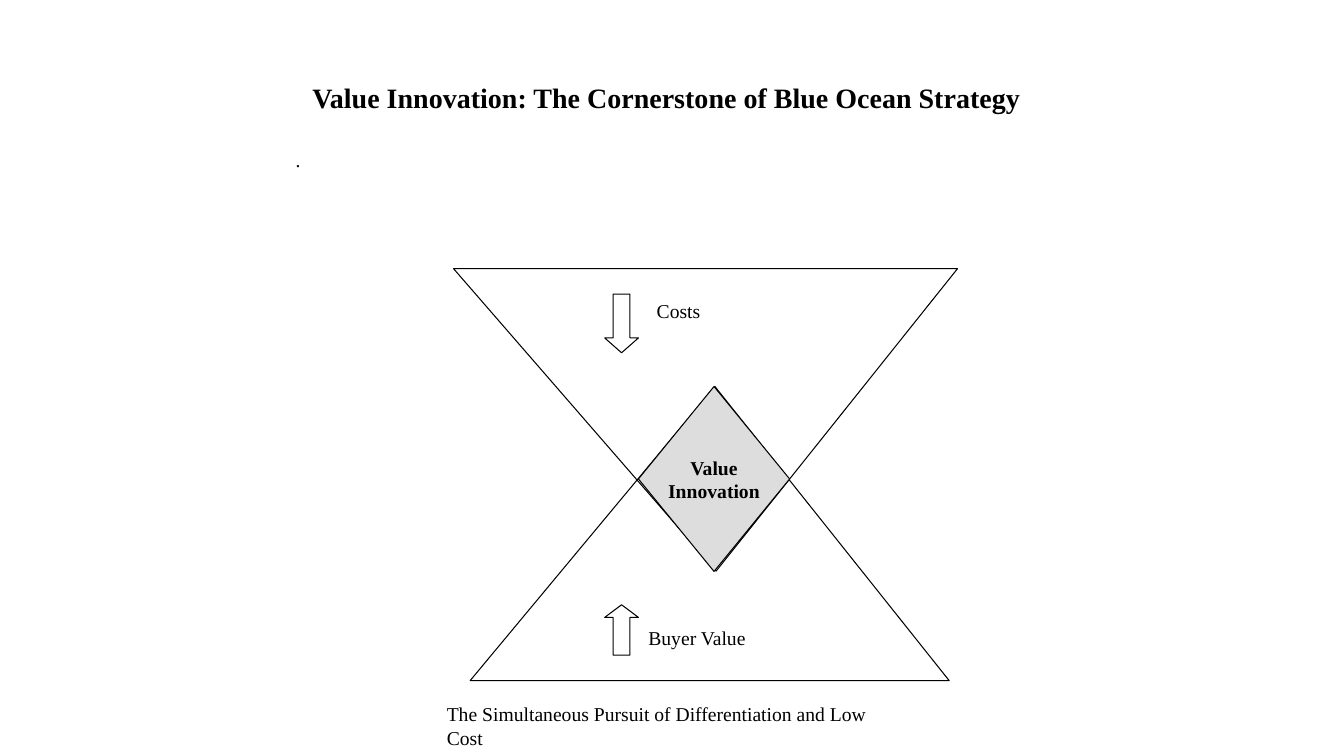
from dataclasses import dataclass
from typing import NamedTuple

from pptx import Presentation
from pptx.dml.color import RGBColor
from pptx.enum.shapes import MSO_SHAPE
from pptx.enum.text import MSO_ANCHOR, PP_ALIGN
from pptx.util import Cm, Pt


@dataclass(frozen=True)
class Theme:
    ink: RGBColor = RGBColor(0x00, 0x00, 0x00)
    core: RGBColor = RGBColor(0xDD, 0xDD, 0xDD)
    font: str = "Times New Roman"
    title: Pt = Pt(20)
    body: Pt = Pt(14)
    outline: Pt = Pt(0.75)


THEME = Theme()


class Box(NamedTuple):
    """A rectangle in centimetres."""
    left: float
    top: float
    width: float
    height: float

    def inner(self, dx, dy, width, height):
        return Box(self.left + dx, self.top + dy, width, height)

    def lengths(self):
        return [Cm(length) for length in self]


def write(frame, text, size=THEME.body, bold=False, align=PP_ALIGN.LEFT, wrap=True):
    frame.text = text
    frame.word_wrap = wrap
    for paragraph in frame.paragraphs:
        paragraph.alignment = align
        for run in paragraph.runs:
            run.font.name = THEME.font
            run.font.size = size
            run.font.bold = bold
            run.font.color.rgb = THEME.ink


def add_text(slide, box, text, **style):
    write(slide.shapes.add_textbox(*box.lengths()).text_frame, text, **style)


def add_outline(slide, preset, box, adjustments=(), fill=None):
    outline = slide.shapes.add_shape(preset, *box.lengths())
    outline.shadow.inherit = False
    for index, value in enumerate(adjustments):
        outline.adjustments[index] = value
    if fill is None:
        outline.fill.background()
    else:
        outline.fill.solid()
        outline.fill.fore_color.rgb = fill
    outline.line.color.rgb = THEME.ink
    outline.line.width = THEME.outline
    return outline


def add_heading(slide, box):
    add_text(slide, box.inner(0.42, 0, 18.85, 1.09),
             "Value Innovation: The Cornerstone of Blue Ocean Strategy",
             size=THEME.title, bold=True)
    add_text(slide, box.inner(0, 1.7, box.width, 0.86), ".", align=PP_ALIGN.JUSTIFY)


def add_buyer_value(slide, box):
    add_outline(slide, MSO_SHAPE.ISOSCELES_TRIANGLE, box, [0.511])
    add_outline(slide, MSO_SHAPE.UP_ARROW, box.inner(3.39, 5.5, 0.85, 1.27), [0.5, 0.375])
    add_text(slide, box.inner(4.24, 5.92, 3.02, 0.85), "Buyer Value", wrap=False)


def add_costs(slide, box):
    funnel = add_outline(slide, MSO_SHAPE.ISOSCELES_TRIANGLE, box, [1 - 0.521])
    funnel.rotation = 180
    add_outline(slide, MSO_SHAPE.DOWN_ARROW, box.inner(3.81, 0.64, 0.85, 1.48), [0.5, 0.438])
    add_text(slide, box.inner(4.87, 0.64, 1.63, 0.85), "Costs", wrap=False)


def add_value_innovation(slide, box):
    core = add_outline(slide, MSO_SHAPE.DIAMOND, box, fill=THEME.core)
    core.text_frame.vertical_anchor = MSO_ANCHOR.MIDDLE
    write(core.text_frame, "Value\nInnovation", bold=True, align=PP_ALIGN.CENTER, wrap=False)


def main():
    deck = Presentation()
    deck.slide_width, deck.slide_height = Cm(33.87), Cm(19.05)
    slide = deck.slides.add_slide(deck.slide_layouts[6])
    add_heading(slide, Box(7.2, 1.9, 20.12, 2.56))
    add_buyer_value(slide, Box(11.85, 9.74, 12.07, 7.41))
    add_costs(slide, Box(11.43, 6.77, 12.7, 7.62))
    add_text(slide, Box(11.01, 17.57, 12.09, 0.85),
             "The Simultaneous Pursuit of Differentiation and Low Cost")
    add_value_innovation(slide, Box(16.09, 9.74, 3.81, 4.66))
    deck.save("out.pptx")


if __name__ == "__main__":
    main()
